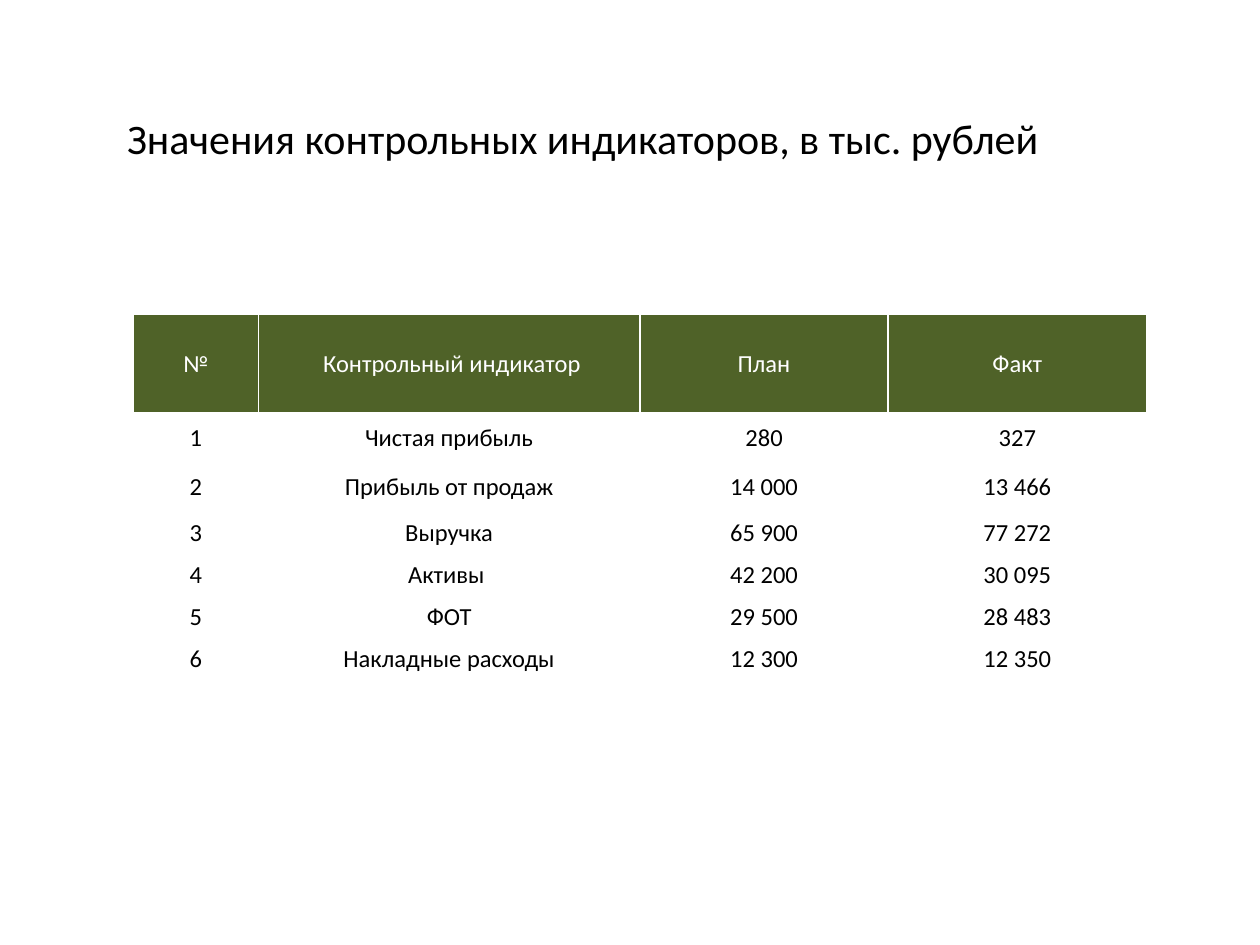
import pptx
import pptx.util
import pptx.dml.color
import pptx.enum.text
import pptx.oxml
import pptx.oxml.ns

Inches, Pt = pptx.util.Inches, pptx.util.Pt
RGBColor = pptx.dml.color.RGBColor

TITLE = "Значения контрольных индикаторов, в тыс. рублей"
HEADER = ("№", " Контрольный индикатор", "План", "Факт")
INDICATORS = [
    ("1", "Чистая прибыль", "280", "327"),
    ("2", "Прибыль от продаж", "14 000", "13 466"),
    ("3", "Выручка", "65 900", "77 272"),
    ("4", "Активы ", "42 200", "30 095"),
    ("5", "ФОТ", "29 500", "28 483"),
    ("6", "Накладные расходы", "12 300", "12 350"),
]
COLUMN_WIDTHS = (0.99, 3.03, 1.97, 2.05)
ROW_HEIGHTS = (0.8, 0.38, 0.39, 0.25, 0.25, 0.17, 0.17)

FONT = "Calibri"
BLACK = RGBColor(0x00, 0x00, 0x00)
WHITE = RGBColor(0xFF, 0xFF, 0xFF)
OLIVE = RGBColor(0x4F, 0x62, 0x28)


def style_text(para, size, color):
    for span in para.runs:
        span.font.name = FONT
        span.font.size = Pt(size)
        span.font.bold = False
        span.font.color.rgb = color


def set_borders(cell, widths):
    """Draw white borders; widths maps a side (L, R, T, B) to points."""
    properties = cell._tc.get_or_add_tcPr()
    for position, side in enumerate("LRTB"):
        line = pptx.oxml.parse_xml(
            f'<a:ln{side} {pptx.oxml.ns.nsdecls("a")} w="{Pt(widths[side])}">'
            f'<a:solidFill><a:srgbClr val="{WHITE}"/></a:solidFill></a:ln{side}>'
        )
        properties.insert(position, line)


def add_title(page):
    box = page.shapes.add_textbox(Inches(0.91), Inches(0.84), Inches(7.48), Inches(0.5))
    frame = box.text_frame
    frame.word_wrap = True
    frame.auto_size = pptx.enum.text.MSO_AUTO_SIZE.SHAPE_TO_FIT_TEXT
    frame.text = TITLE
    style_text(frame.paragraphs[0], 24, BLACK)


def fill_cell(cell, text, is_header, is_number):
    cell.text = text
    cell.vertical_anchor = pptx.enum.text.MSO_ANCHOR.MIDDLE
    para = cell.text_frame.paragraphs[0]
    para.alignment = pptx.enum.text.PP_ALIGN.CENTER
    style_text(para, 14, WHITE if is_header else BLACK)
    if is_header:
        cell.fill.solid()
        cell.fill.fore_color.rgb = OLIVE
    else:
        cell.fill.background()
        if not is_number:
            cell.margin_left = cell.margin_right = 0
            cell.margin_top = cell.margin_bottom = 0


def add_indicator_table(page):
    rows = [HEADER] + INDICATORS
    table = page.shapes.add_table(
        len(rows), len(HEADER), Inches(1.06), Inches(2.49),
        Inches(sum(COLUMN_WIDTHS)), Inches(sum(ROW_HEIGHTS)),
    ).table
    table.horz_banding = False
    for column, width in zip(table.columns, COLUMN_WIDTHS):
        column.width = Inches(width)
    for row, height in zip(table.rows, ROW_HEIGHTS):
        row.height = Inches(height)
    for r, values in enumerate(rows):
        for c, text in enumerate(values):
            cell = table.cell(r, c)
            fill_cell(cell, text, is_header=r == 0, is_number=c == 0)
            set_borders(cell, {"L": 1, "R": 1, "T": 3 if r == 1 else 1,
                               "B": 3 if r == 0 else 1})


def main():
    deck = pptx.Presentation()
    deck.slide_width, deck.slide_height = Inches(10), Inches(7.5)
    page = deck.slides.add_slide(deck.slide_layouts[6])
    add_title(page)
    add_indicator_table(page)
    deck.save("out.pptx")


if __name__ == "__main__":
    main()
